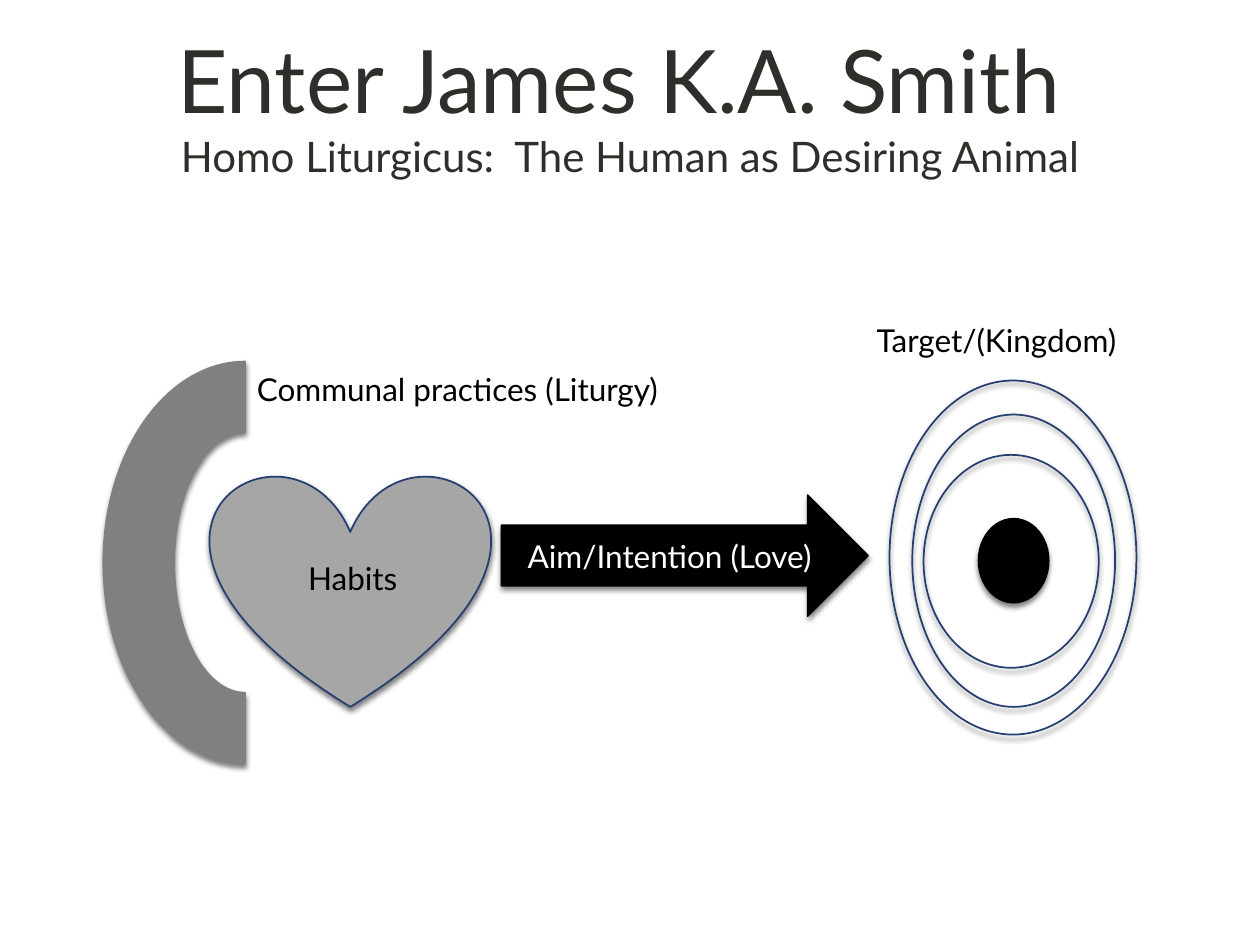
from lxml.etree import SubElement
from pptx import Presentation
from pptx.dml.color import RGBColor
from pptx.enum.shapes import MSO_SHAPE
from pptx.enum.text import MSO_ANCHOR, PP_ALIGN
from pptx.oxml.ns import qn
from pptx.util import Inches, Pt

FONT = "Lato"
BLACK = RGBColor(0x00, 0x00, 0x00)
WHITE = RGBColor(0xFF, 0xFF, 0xFF)
CHARCOAL = RGBColor(0x2D, 0x2F, 0x2B)
GRAY = RGBColor(0x80, 0x80, 0x80)
LIGHT_GRAY = RGBColor(0xA6, 0xA6, 0xA6)
NAVY = RGBColor(0x26, 0x3F, 0x70)


def add_shape(kind, box, fill, line):
    """Add a preset shape with a soft shadow below; None means no fill or line."""
    sp = s.shapes.add_shape(kind, *map(Inches, box))
    if fill is None:
        sp.fill.background()
    else:
        sp.fill.solid()
        sp.fill.fore_color.rgb = fill
    if line is None:
        sp.line.fill.background()
    else:
        sp.line.color.rgb = line
        sp.line.width = Pt(1)
    sp.shadow.inherit = False
    effects = sp.element.spPr.find(qn("a:effectLst"))
    shadow = SubElement(effects, qn("a:outerShdw"), blurRad=str(Pt(3)),
                        dist=str(Pt(2)), dir="5400000", rotWithShape="0")
    color = SubElement(shadow, qn("a:srgbClr"), val="000000")
    SubElement(color, qn("a:alpha"), val="50000")
    return sp


def write(tf, text, color, align):
    tf.text = text
    tf.word_wrap = True
    p = tf.paragraphs[0]
    p.alignment = align
    for r in p.runs:
        r.font.name = FONT
        r.font.size = Pt(18)
        r.font.color.rgb = color


prs = Presentation()
prs.slide_width, prs.slide_height = Inches(10), Inches(7.5)
s = prs.slides.add_slide(prs.slide_layouts[5])

title = s.shapes.title
title.left, title.top = Inches(0.75), Inches(0.07)
title.width, title.height = Inches(8.5), Inches(1.5)
tf = title.text_frame
tf.vertical_anchor = MSO_ANCHOR.MIDDLE
write(tf, "Enter James K.A. Smith \vHomo Liturgicus:  The Human as Desiring Animal",
      CHARCOAL, PP_ALIGN.CENTER)
for r, size in zip(tf.paragraphs[0].runs, (50, 24)):
    r.font.size = Pt(size)

# Practices surround the heart, which aims at the target
arc = add_shape(MSO_SHAPE.BLOCK_ARC, (0.35, 3.34, 3.19, 2.25), GRAY, GRAY)
arc.rotation = 270
add_shape(MSO_SHAPE.HEART, (1.67, 3.76, 2.22, 1.85), LIGHT_GRAY, NAVY)
arrow = add_shape(MSO_SHAPE.RIGHT_ARROW, (3.98, 3.93, 2.91, 0.96), BLACK, BLACK)
arrow.text_frame.vertical_anchor = MSO_ANCHOR.MIDDLE
write(arrow.text_frame, "Aim/Intention (Love)", WHITE, PP_ALIGN.CENTER)

rings = [
    (7.06, 3.02, 1.96, 2.81),
    (7.24, 3.29, 1.61, 2.32),
    (7.33, 3.61, 1.39, 1.69),
]
for box in rings:
    add_shape(MSO_SHAPE.OVAL, box, None, NAVY)
add_shape(MSO_SHAPE.OVAL, (7.76, 4.11, 0.57, 0.68), BLACK, None)

labels = [
    ("Habits", 2.32, 4.39, 0.96, PP_ALIGN.CENTER),
    ("Communal practices (Liturgy)", 1.94, 2.89, 4.56, PP_ALIGN.LEFT),
    ("Target/(Kingdom)", 6.86, 2.5, 2.36, PP_ALIGN.LEFT),
]
for text, left, top, width, align in labels:
    tb = s.shapes.add_textbox(Inches(left), Inches(top), Inches(width), Inches(0.4))
    write(tb.text_frame, text, BLACK, align)

prs.save("out.pptx")
